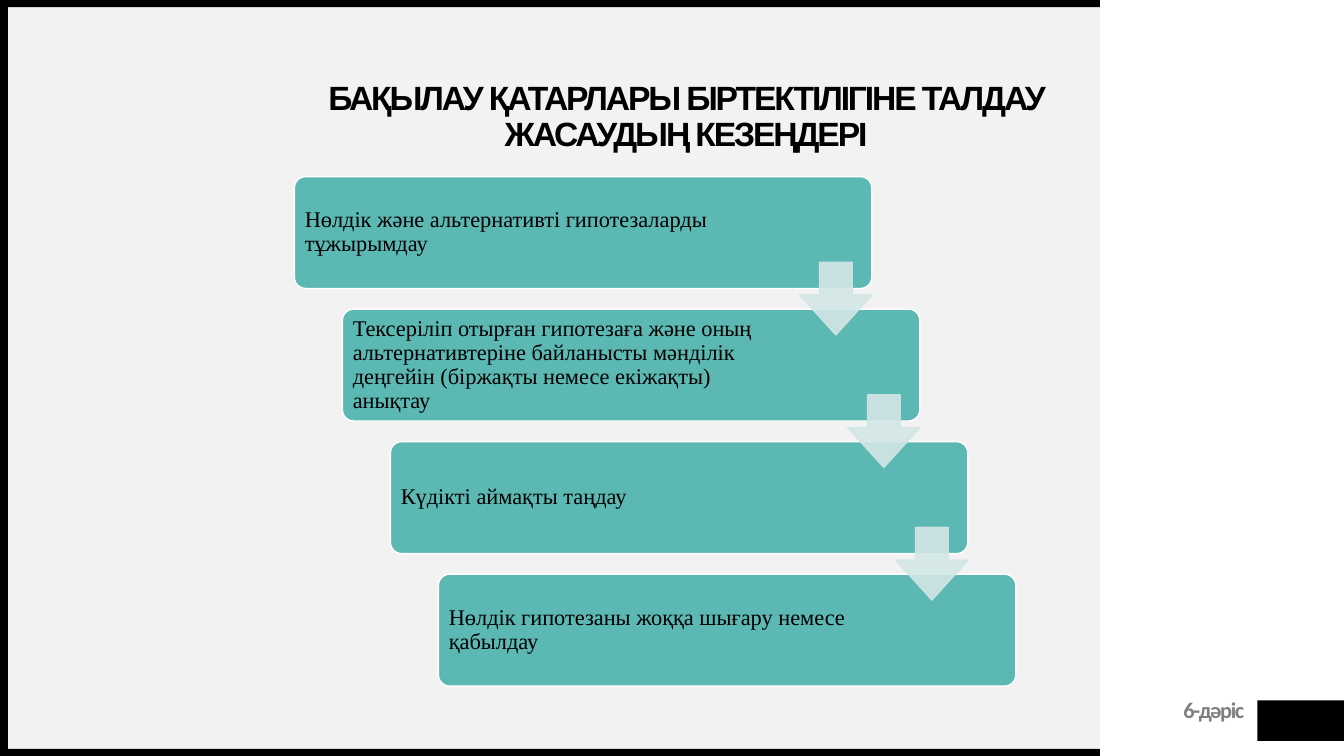
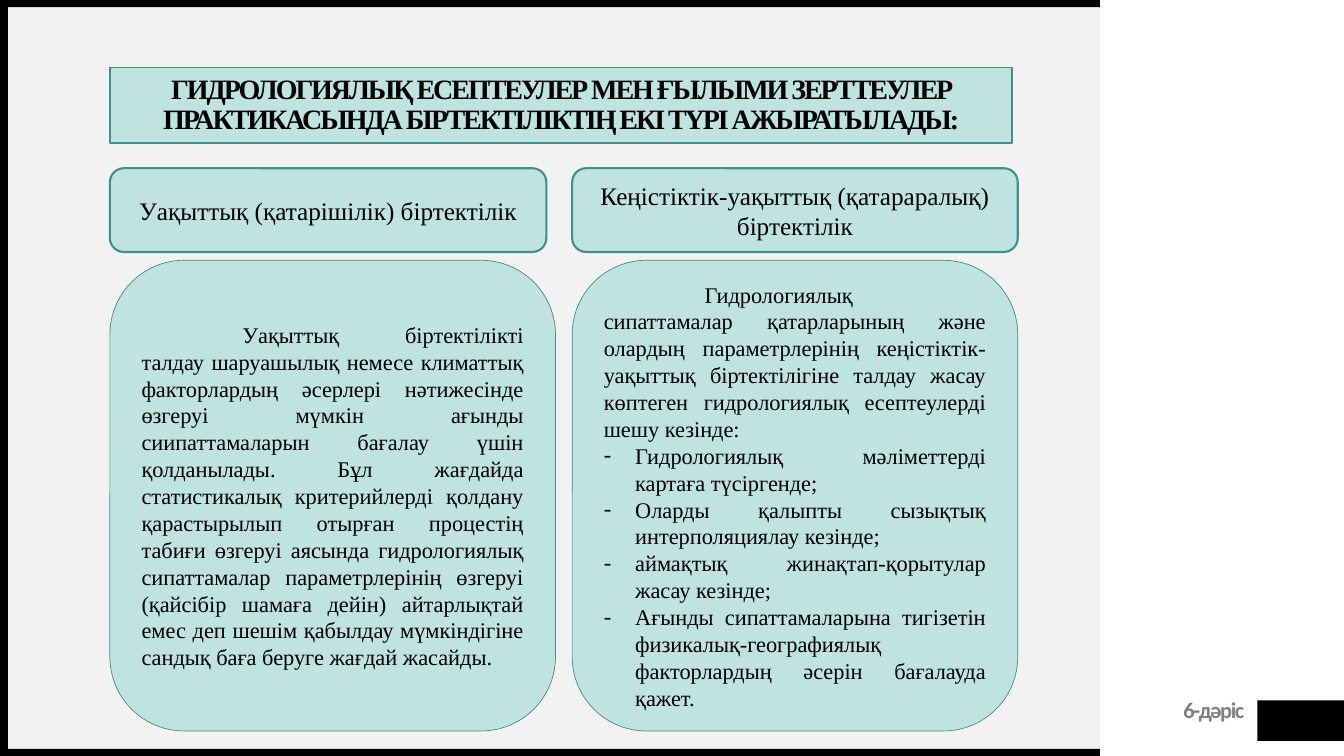
from lxml import etree
from pptx import Presentation
from pptx.dml.color import RGBColor
from pptx.enum.shapes import MSO_SHAPE
from pptx.enum.text import MSO_ANCHOR, MSO_AUTO_SIZE, PP_ALIGN
from pptx.oxml.ns import qn
from pptx.util import Cm, Pt

RECTANGLE, ROUNDED = MSO_SHAPE.RECTANGLE, MSO_SHAPE.ROUNDED_RECTANGLE
DOWN_ARROW = MSO_SHAPE.DOWN_ARROW
LEFT, CENTER, RIGHT, JUSTIFY = PP_ALIGN.LEFT, PP_ALIGN.CENTER, PP_ALIGN.RIGHT, PP_ALIGN.JUSTIFY
TOP, MIDDLE = MSO_ANCHOR.TOP, MSO_ANCHOR.MIDDLE

BLACK = RGBColor(0x00, 0x00, 0x00)
WHITE = RGBColor(0xFF, 0xFF, 0xFF)
PANEL_GRAY = RGBColor(0xF2, 0xF2, 0xF2)
FOOTER_GRAY = RGBColor(0x80, 0x80, 0x80)
TEAL = RGBColor(0x5C, 0xB8, 0xB3)
PALE_TEAL = RGBColor(0xBE, 0xE3, 0xE1)
DARK_TEAL = RGBColor(0x3F, 0x90, 0x8C)
ARROW_TEAL = RGBColor(0xD2, 0xE6, 0xE5)

SERIF, SANS, FOOTER_FONT = "Times New Roman", "Arial", "Calibri"

STEPS = [
    "Нөлдік және альтернативті гипотезаларды тұжырымдау",
    "Тексеріліп отырған гипотезаға және оның альтернативтеріне байланысты "
    "мәнділік деңгейін (біржақты немесе екіжақты) анықтау",
    "Күдікті аймақты таңдау",
    "Нөлдік гипотезаны жоққа шығару немесе қабылдау",
]

# Each column: left, heading width, heading, introduction, list items
COLUMNS = [
    (2.77, 11, "Уақыттық (қатарішілік) біртектілік",
     "Уақыттық біртектілікті талдау шаруашылық немесе климаттық факторлардың "
     "әсерлері нәтижесінде өзгеруі мүмкін ағынды сиипаттамаларын бағалау үшін "
     "қолданылады. Бұл жағдайда статистикалық критерийлерді қолдану "
     "қарастырылып отырған процестің табиғи өзгеруі аясында гидрологиялық "
     "сипаттамалар параметрлерінің өзгеруі (қайсібір шамаға дейін) "
     "айтарлықтай емес деп шешім қабылдау мүмкіндігіне сандық баға беруге "
     "жағдай жасайды.", []),
    (14.42, 11.23, "Кеңістіктік-уақыттық (қатараралық) біртектілік",
     "Гидрологиялық сипаттамалар қатарларының және олардың параметрлерінің "
     "кеңістіктік-уақыттық біртектілігіне талдау жасау көптеген гидрологиялық "
     "есептеулерді шешу кезінде:",
     ["Гидрологиялық мәліметтерді картаға түсіргенде;",
      "Оларды қалыпты сызықтық интерполяциялау кезінде;",
      "аймақтық жинақтап-қорытулар жасау кезінде;",
      "Ағынды сипаттамаларына тигізетін физикалық-географиялық факторлардың "
      "әсерін бағалауда қажет."]),
]


def set_frame(shape, anchor=MIDDLE, margins=None):
    """Margins are left, top, right and bottom in centimetres."""
    frame = shape.text_frame
    frame.word_wrap = True
    frame.auto_size = MSO_AUTO_SIZE.NONE
    frame.vertical_anchor = anchor
    if margins:
        (frame.margin_left, frame.margin_top,
         frame.margin_right, frame.margin_bottom) = map(Cm, margins)
    return frame


def write(paragraph, text, size=16, font=SERIF, color=BLACK, bold=False,
          align=LEFT, line_spacing=None, tracking=None, first_indent=0, bullet=None):
    properties = paragraph._p.get_or_add_pPr()
    if bullet:
        properties.set("marL", str(Cm(0.79)))
        properties.set("indent", str(-Cm(0.79)))
        etree.SubElement(properties, qn("a:buFont"), typeface=font)
        etree.SubElement(properties, qn("a:buChar"), char=bullet)
    elif first_indent:
        properties.set("indent", str(Cm(first_indent)))
    paragraph.alignment = align
    if line_spacing:
        paragraph.line_spacing = line_spacing
    run = paragraph.add_run()
    run.text = text
    run.font.size, run.font.name, run.font.bold = Pt(size), font, bold
    run.font.color.rgb = color
    if tracking:
        run._r.get_or_add_rPr().set("spc", str(int(tracking * 100)))


def paint(shape, fill, line=None, width=1.0):
    shape.fill.solid()
    shape.fill.fore_color.rgb = fill
    if line is None:
        shape.line.fill.background()
    else:
        shape.line.color.rgb = line
        shape.line.width = Pt(width)


def add_box(slide, kind, box, fill, line=None, width=1.0):
    shape = slide.shapes.add_shape(kind, *map(Cm, box))
    shape.shadow.inherit = False
    paint(shape, fill, line, width)
    return shape


def build_layout(layout, slide):
    """Draw the panel, edge bands and footer, then move them to the layout."""
    parts = [add_box(slide, RECTANGLE, box, fill) for box, fill in [
        ((0.2, 0.18, 27.52, 18.69), PANEL_GRAY),
        ((31.69, 17.65, 2.18, 1.02), BLACK),
        ((0, 18.87, 27.72, 0.18), BLACK),
        ((0, 0, 27.72, 0.18), BLACK),
        ((0, 0, 0.2, 19.05), BLACK),
    ]]
    footer = slide.shapes.add_textbox(Cm(26.74), Cm(17.62), Cm(4.62), Cm(0.62))
    frame = set_frame(footer, TOP, (0, 0.1, 0, 0))
    write(frame.paragraphs[0], "6-дәріс", font=FOOTER_FONT, color=FOOTER_GRAY,
          bold=True, align=RIGHT, line_spacing=Pt(14), tracking=-1)
    for part in parts + [footer]:
        layout.shapes.element.append(part.element)


def add_title(slide, text, box, size, font, anchor=MIDDLE, top=0):
    title = slide.shapes.title
    title.left, title.top, title.width, title.height = map(Cm, box)
    frame = set_frame(title, anchor, (0, top, 0, 0))
    write(frame.paragraphs[0], text, size=size, font=font, bold=True,
          align=CENTER, line_spacing=0.9, tracking=-1.5)
    return title


def add_staircase(slide, left, top):
    """Four stepped boxes, with an arrow over each gap."""
    step_x, step_y = 1.21, 3.34
    corners = [(left + step_x * i, top + step_y * i) for i in range(len(STEPS))]
    for (x, y), text in zip(corners, STEPS):
        shape = add_box(slide, ROUNDED, (x, y, 14.55, 2.82), TEAL, WHITE)
        shape.adjustments[0] = 0.1
        frame = set_frame(shape, MIDDLE, (0.18, 0.18, 3.2, 0.18))
        write(frame.paragraphs[0], text, line_spacing=0.9)
    for x, y in corners[:-1]:
        arrow = add_box(slide, DOWN_ARROW, (x + 12.73, y + 2.16, 1.83, 1.83),
                        ARROW_TEAL, ARROW_TEAL)
        arrow.adjustments[0], arrow.adjustments[1] = 0.45, 0.55
        # Slight transparency of fill and line
        for color in arrow.element.spPr.iter(qn("a:srgbClr")):
            etree.SubElement(color, qn("a:alpha"), val="90000")


def add_column(slide, left, top, heading_width, heading, introduction, items):
    header = add_box(slide, ROUNDED, (left, top, heading_width, 2.11),
                     PALE_TEAL, DARK_TEAL, 1.5)
    write(set_frame(header).paragraphs[0], heading, size=18, align=CENTER)

    body = add_box(slide, ROUNDED, (left, top + 2.32, 11.23, 11.86),
                   PALE_TEAL, DARK_TEAL, 0.5)
    frame = set_frame(body)
    write(frame.paragraphs[0], introduction, align=JUSTIFY, first_indent=2.54)
    for item in items:
        write(frame.add_paragraph(), item, align=JUSTIFY, bullet="-")


def build_steps_slide(slide):
    add_title(slide, "БАҚЫЛАУ ҚАТАРЛАРЫ БІРТЕКТІЛІГІНЕ ТАЛДАУ ЖАСАУДЫҢ КЕЗЕҢДЕРІ",
              (5.92, 1.9, 22.73, 2.5), 24, SANS, TOP, 0.15)
    add_staircase(slide, 7.42, 4.45)


def build_types_slide(slide):
    title = add_title(slide, "ГИДРОЛОГИЯЛЫҚ ЕСЕПТЕУЛЕР МЕН ҒЫЛЫМИ ЗЕРТТЕУЛЕР "
                      "ПРАКТИКАСЫНДА БІРТЕКТІЛІКТІҢ ЕКІ ТҮРІ АЖЫРАТЫЛАДЫ:",
                      (2.77, 1.7, 22.73, 1.9), 20, SERIF)
    paint(title, PALE_TEAL, DARK_TEAL)
    for left, *content in COLUMNS:
        add_column(slide, left, 4.24, *content)


def main():
    presentation = Presentation()
    presentation.slide_width, presentation.slide_height = Cm(33.87), Cm(19.05)
    layout = presentation.slide_layouts[5]
    steps_slide = presentation.slides.add_slide(layout)
    build_layout(layout, steps_slide)
    build_steps_slide(steps_slide)
    build_types_slide(presentation.slides.add_slide(layout))
    presentation.save("out.pptx")


if __name__ == "__main__":
    main()
